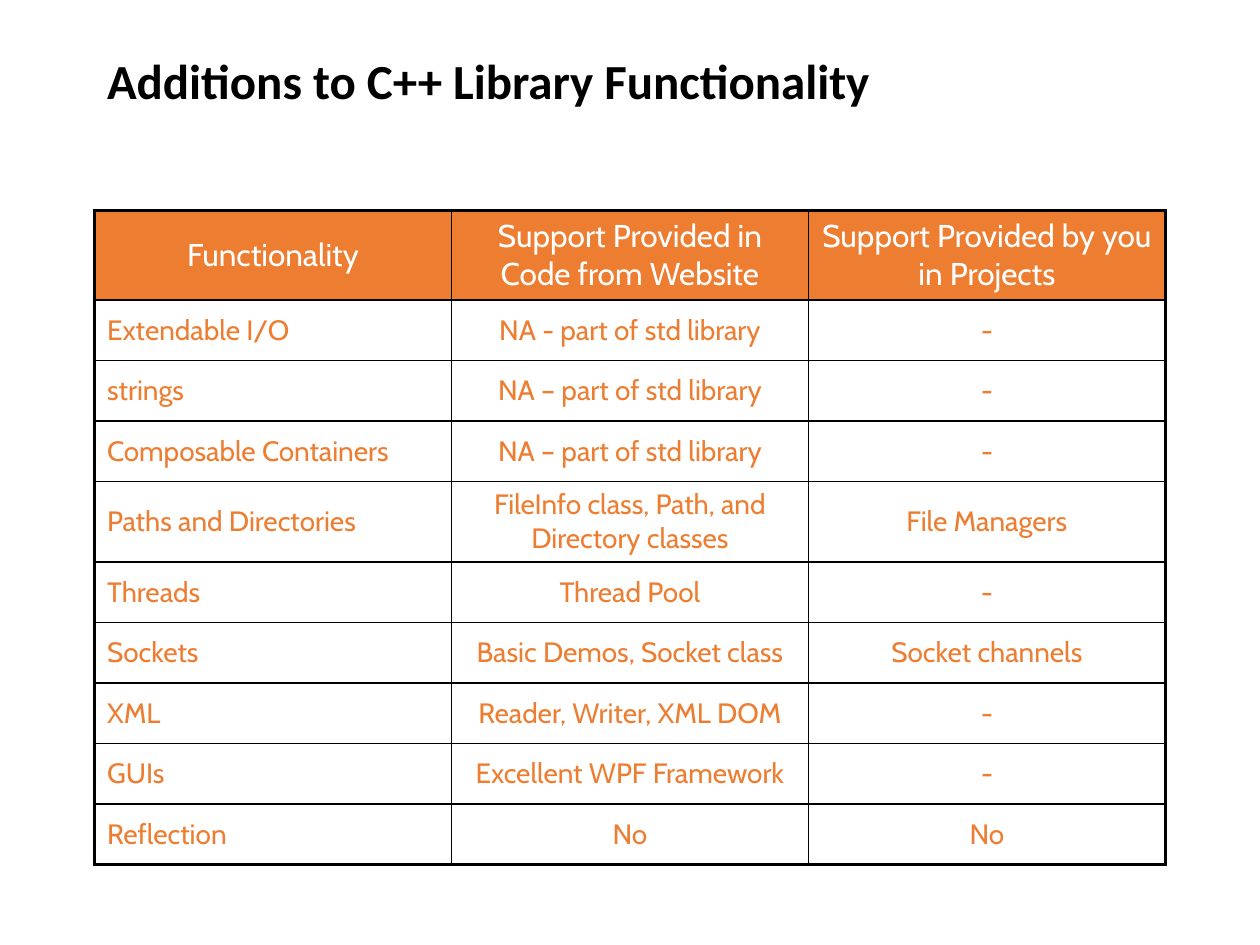
from lxml import etree
from pptx import Presentation
from pptx.dml.color import RGBColor
from pptx.enum.text import MSO_ANCHOR, PP_ALIGN
from pptx.oxml.ns import qn
from pptx.util import Inches, Pt

LEFT, CENTER = PP_ALIGN.LEFT, PP_ALIGN.CENTER
MIDDLE = MSO_ANCHOR.MIDDLE
BLACK = RGBColor(0, 0, 0)
WHITE = RGBColor(255, 255, 255)
ORANGE = RGBColor(0xED, 0x7D, 0x31)

TITLE = "Additions to C++ Library Functionality"
ROWS = [
    ("Functionality", "Support Provided in Code from Website",
     "Support Provided by you in Projects"),
    ("Extendable I/O", "NA - part of std library", "-"),
    ("strings", "NA – part of std library", "-"),
    ("Composable Containers", "NA – part of std library", "-"),
    ("Paths and Directories", "FileInfo class, Path, and Directory classes",
     "File Managers"),
    ("Threads", "Thread Pool", "-"),
    ("Sockets", "Basic Demos, Socket class", "Socket channels"),
    ("XML", "Reader, Writer, XML DOM", "-"),
    ("GUIs", "Excellent WPF Framework", "-"),
    ("Reflection", "No", "No"),
]
HEIGHT = 0.48
TALL = {0: 0.71, 4: 0.64}
HEAD_SIZE, BODY_SIZE = 18, 16
THICK, THIN = 2.25, 1


def style(par, font, size, color, bold=False):
    for run in par.runs:
        run.font.name = font
        run.font.size = Pt(size)
        run.font.color.rgb = color
        run.font.bold = bold


def add_borders(cell, outer):
    """Draw all four edges, thick where the edge is on the table's outside."""
    props = cell._tc.get_or_add_tcPr()
    for side, thick in outer.items():
        width = Pt(THICK if thick else THIN)
        line = etree.SubElement(props, qn("a:" + side), w=str(int(width)))
        fill = etree.SubElement(line, qn("a:solidFill"))
        etree.SubElement(fill, qn("a:srgbClr"), val=str(BLACK))


def add_title(slide):
    title = slide.shapes.title
    title.left, title.top = Inches(0.75), Inches(0.25)
    title.width, title.height = Inches(8.5), Inches(0.83)
    frame = title.text_frame
    frame.text = TITLE
    frame.vertical_anchor = MIDDLE
    par = frame.paragraphs[0]
    par.alignment = LEFT
    par.line_spacing = 0.9
    style(par, "Calibri", 28, BLACK, bold=True)


def add_grid(slide):
    heights = [TALL.get(r, HEIGHT) for r in range(len(ROWS))]
    last_row, last_col = len(ROWS) - 1, len(ROWS[0]) - 1
    table = slide.shapes.add_table(
        len(ROWS), len(ROWS[0]), Inches(0.75), Inches(1.67),
        Inches(8.5), Inches(sum(heights))).table
    table.horz_banding = False
    for r, texts in enumerate(ROWS):
        table.rows[r].height = Inches(heights[r])
        head = r == 0
        for c, text in enumerate(texts):
            cell = table.cell(r, c)
            add_borders(cell, {"lnL": c == 0, "lnR": c == last_col,
                               "lnT": head, "lnB": r == last_row})
            if head:
                cell.fill.solid()
                cell.fill.fore_color.rgb = ORANGE
            else:
                cell.fill.background()
            cell.vertical_anchor = MIDDLE
            cell.text_frame.text = text
            par = cell.text_frame.paragraphs[0]
            par.alignment = CENTER if head or c else LEFT
            style(par, "Cabin", HEAD_SIZE if head else BODY_SIZE,
                  WHITE if head else ORANGE)


def main():
    deck = Presentation()
    deck.slide_width, deck.slide_height = Inches(10), Inches(7.5)
    slide = deck.slides.add_slide(deck.slide_layouts[5])
    add_title(slide)
    add_grid(slide)
    deck.save("out.pptx")


if __name__ == "__main__":
    main()
